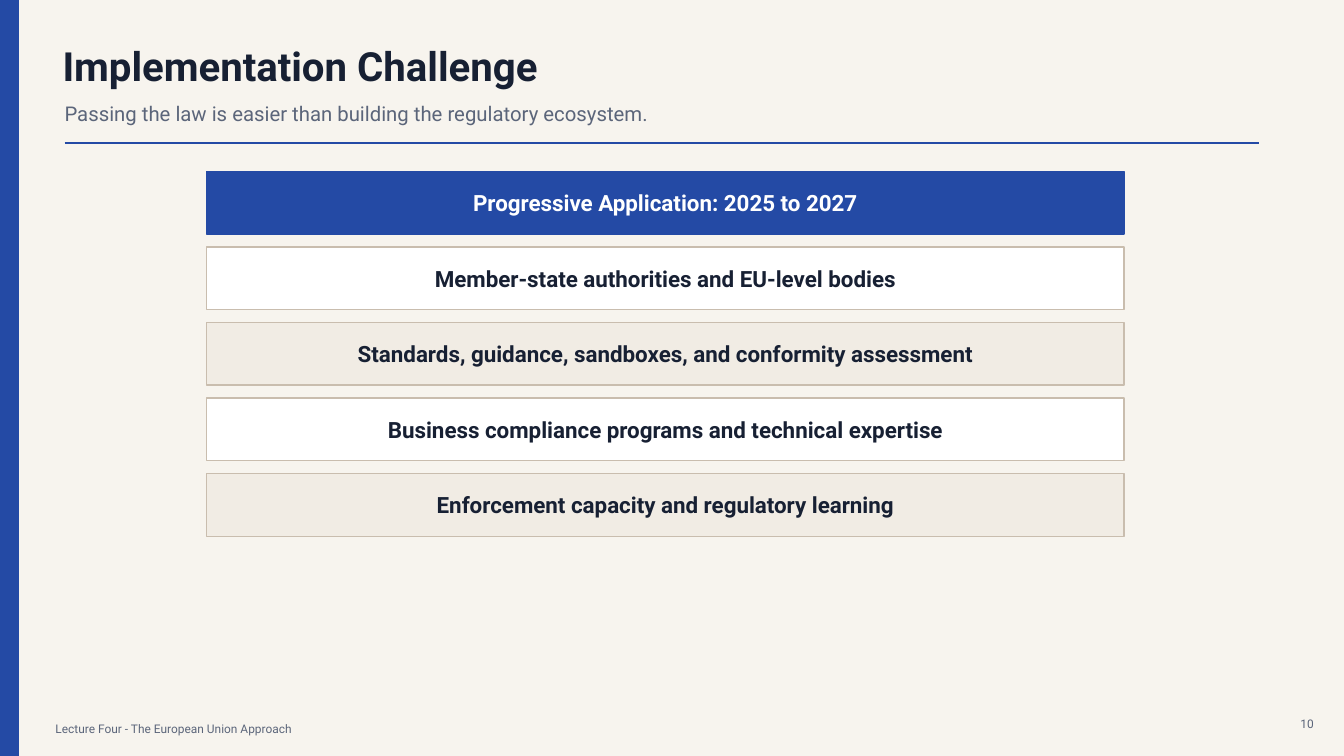
from pptx import Presentation
from pptx.dml.color import RGBColor
from pptx.enum.shapes import MSO_CONNECTOR as Connector, MSO_SHAPE as Shape
from pptx.enum.text import MSO_ANCHOR as Anchor, MSO_AUTO_SIZE as AutoSize, PP_ALIGN as Align
from pptx.oxml.ns import qn
from pptx.util import Inches, Pt
from lxml.etree import SubElement

BLUE, INK, GREY, WHITE = "244AA5", "172033", "5B657A", "FFFFFF"
SAND, BORDER, PAPER = "F1ECE4", "C9BDAE", "F7F4EE"


def rgb(value):
    return RGBColor.from_string(value)


def write(holder, text, size, color, bold=False, align=Align.LEFT):
    frame = holder.text_frame
    frame.text = text
    frame.word_wrap = True
    frame.auto_size = AutoSize.NONE
    frame.vertical_anchor = Anchor.MIDDLE
    frame.margin_left = frame.margin_right = frame.margin_top = frame.margin_bottom = 0
    paragraph = frame.paragraphs[0]
    paragraph.alignment = align
    paragraph.font.name = "Roboto"
    paragraph.font.size = Pt(size)
    paragraph.font.bold = bold
    paragraph.font.color.rgb = rgb(color)


deck = Presentation()
deck.slide_width, deck.slide_height = Inches(13.33), Inches(7.5)
slide = deck.slides.add_slide(deck.slide_layouts[5])
slide.background.fill.solid()
slide.background.fill.fore_color.rgb = rgb(PAPER)

title = slide.shapes.title
title.left, title.top = Inches(0.62), Inches(0.42)
title.width, title.height = Inches(9.8), Inches(0.45)
write(title, "Implementation Challenge", 28.7, INK, bold=True)

notes = [
    (0.64, 0.95, 10.9, 0.35, "Passing the law is easier than building the regulatory ecosystem.", 14.5, Align.LEFT),
    (0.55, 7.13, 9, 0.2, "Lecture Four - The European Union Approach", 8.5, Align.LEFT),
    (12.75, 7.08, 0.28, 0.2, "10", 8.5, Align.RIGHT),
]
for left, top, width, height, text, size, align in notes:
    caption = slide.shapes.add_textbox(Inches(left), Inches(top), Inches(width), Inches(height))
    write(caption, text, size, GREY, align=align)

rule = slide.shapes.add_connector(Connector.STRAIGHT, Inches(0.64), Inches(1.42), Inches(12.49), Inches(1.42))
rule.line.color.rgb = rgb(BLUE)
rule.line.width = Pt(1.25)
SubElement(rule._element.spPr, qn("a:effectLst"))

layers = [
    ("Progressive Application: 2025 to 2027", BLUE, BLUE, WHITE),
    ("Member-state authorities and EU-level bodies", WHITE, BORDER, INK),
    ("Standards, guidance, sandboxes, and conformity assessment", SAND, BORDER, INK),
    ("Business compliance programs and technical expertise", WHITE, BORDER, INK),
    ("Enforcement capacity and regulatory learning", SAND, BORDER, INK),
]
bars = [(0, 0, 0.18, 7.5, "", BLUE, BLUE, WHITE)]
bars += [(2.05, 1.7 + 0.75 * row, 9.1, 0.62, *layer) for row, layer in enumerate(layers)]
for left, top, width, height, text, fill, outline, ink in bars:
    bar = slide.shapes.add_shape(Shape.RECTANGLE, Inches(left), Inches(top), Inches(width), Inches(height))
    bar.shadow.inherit = False
    bar.fill.solid()
    bar.fill.fore_color.rgb = rgb(fill)
    bar.line.color.rgb = rgb(outline)
    bar.line.width = Pt(1)
    if text:
        write(bar, text, 16, ink, bold=True, align=Align.CENTER)

deck.save("out.pptx")
